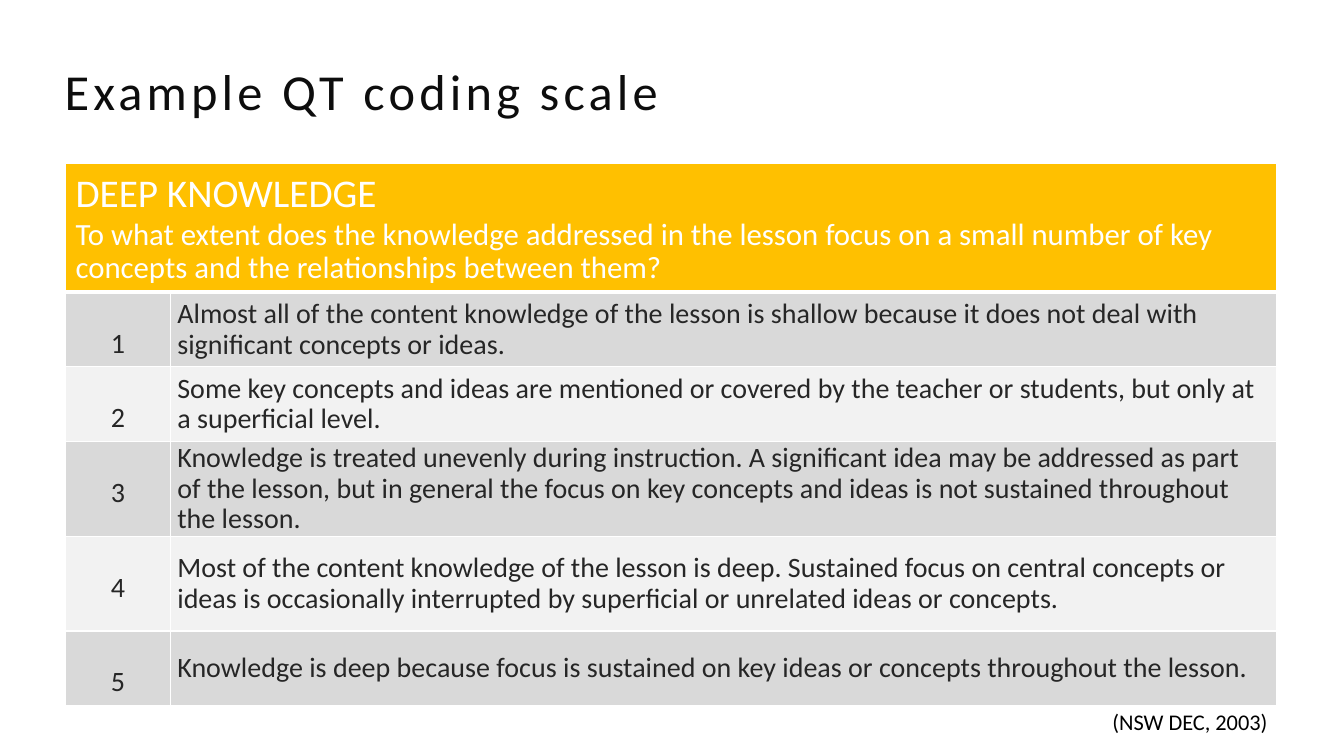
from dataclasses import dataclass

from lxml.etree import SubElement
from pptx import Presentation
from pptx.dml.color import RGBColor as Rgb
from pptx.enum.text import MSO_ANCHOR as Anchor, MSO_AUTO_SIZE as Fit, PP_ALIGN as Align
from pptx.oxml.ns import qn
from pptx.util import Inches, Pt


@dataclass(frozen=True)
class Theme:
    font: str = "Calibri"
    ink: str = "0D0D0D"
    text: str = "262626"
    black: str = "000000"
    white: str = "FFFFFF"
    gold: str = "FFC000"
    bands: tuple = ("D9D9D9", "F2F2F2")
    title: int = 36
    head: int = 28
    lead: int = 22
    body: int = 20
    note: int = 16


HEAD = "DEEP KNOWLEDGE"
LEAD = ("To what extent does the knowledge addressed in the lesson focus on a "
        "small number of key concepts and the relationships between them?")
# Each level of the scale: row height in grid rows, description
LEVELS = [
    (2.96, "Almost all of the content knowledge of the lesson is shallow because "
           "it does not deal with significant concepts or ideas."),
    (2.96, "Some key concepts and ideas are mentioned or covered by the teacher or "
           "students, but only at a superficial level."),
    (3.76, "Knowledge is treated unevenly during instruction. A significant idea may "
           "be addressed as part of the lesson, but in general the focus on key "
           "concepts and ideas is not sustained throughout the lesson."),
    (3.76, "Most of the content knowledge of the lesson is deep. Sustained focus on "
           "central concepts or ideas is occasionally interrupted by superficial or "
           "unrelated ideas or concepts."),
    (2.96, "Knowledge is deep because focus is sustained on key ideas or concepts "
           "throughout the lesson."),
]


class Deck:
    """One slide on a grid of 40 columns by 30 rows."""

    def __init__(self, theme):
        self.theme = theme
        self.file = Presentation()
        self.file.slide_width, self.file.slide_height = Inches(13.33), Inches(7.5)
        self.slide = self.file.slides.add_slide(self.file.slide_layouts[5])

    def col(self, n):
        return round(self.file.slide_width * n / 40)

    def row(self, n):
        return round(self.file.slide_height * n / 30)

    def box(self, left, top, wide, high):
        return self.col(left), self.row(top), self.col(wide), self.row(high)

    def style(self, para, size, color, align=Align.LEFT, line=0.9):
        para.alignment, para.line_spacing = align, line
        para.space_before = Pt(0)
        for run in para.runs:
            font = run.font
            font.name, font.size, font.bold = self.theme.font, Pt(size), False
            font.color.rgb = Rgb.from_string(color)

    def title(self, text, *area):
        shape = self.slide.shapes.title
        shape.left, shape.top, shape.width, shape.height = self.box(*area)
        frame = shape.text_frame
        frame.text = text
        frame.vertical_anchor, frame.auto_size = Anchor.MIDDLE, Fit.SHAPE_TO_FIT_TEXT
        para = frame.paragraphs[0]
        self.style(para, self.theme.title, self.theme.ink, line=0.85)
        para.runs[0].font._element.set("spc", "300")

    def note(self, text, *area):
        frame = self.slide.shapes.add_textbox(*self.box(*area)).text_frame
        frame.word_wrap = True
        frame.text = text
        self.style(frame.paragraphs[0], self.theme.note, self.theme.black, Align.RIGHT)

    def paint(self, cell, fill, base=1):
        """Give a cell white borders, the bottom one base points wide, and a fill."""
        props = cell._tc.get_or_add_tcPr()
        for side, width in zip("LRTB", (1, 1, 1, base)):
            edge = SubElement(props, qn(f"a:ln{side}"), w=str(Pt(width)))
            solid = SubElement(edge, qn("a:solidFill"))
            SubElement(solid, qn("a:srgbClr"), val=self.theme.white)
        cell.fill.solid()
        cell.fill.fore_color.rgb = Rgb.from_string(fill)

    def pad(self, cell, side, end):
        cell.margin_left = cell.margin_right = Inches(side)
        cell.margin_top = cell.margin_bottom = Inches(end)

    def scale(self, left, top, cols, first):
        """Draw the coding table: a merged heading row, then one row per level."""
        theme = self.theme
        rows = [first] + [high for high, _ in LEVELS]
        area = self.box(left, top, sum(cols), sum(rows))
        table = self.slide.shapes.add_table(len(rows), len(cols), *area).table
        table.first_row = table.horz_banding = False
        for column, wide in zip(table.columns, cols):
            column.width = self.col(wide)
        for row, high in zip(table.rows, rows):
            row.height = self.row(high)

        for cell in table.rows[0].cells:
            self.paint(cell, theme.gold, 3)
        head = table.cell(0, 0)
        head.merge(table.cell(0, 1))
        self.pad(head, 0.1, 0.05)
        head.vertical_anchor = Anchor.MIDDLE
        head.text_frame.text = f"{HEAD}\n{LEAD}"
        name, lead = head.text_frame.paragraphs
        self.style(name, theme.head, theme.white, line=1.0)
        self.style(lead, theme.lead, theme.white)

        for level, (_, text) in enumerate(LEVELS, 1):
            mark, info = table.rows[level].cells
            for cell, words in ((mark, str(level)), (info, text)):
                self.paint(cell, theme.bands[(level - 1) % 2])
                self.pad(cell, 0.07, 0)
                cell.text_frame.text = words
            info.vertical_anchor = Anchor.MIDDLE
            self.style(mark.text_frame.paragraphs[0], theme.body, theme.text,
                       Align.CENTER, 2.0)
            self.style(info.text_frame.paragraphs[0], theme.body, theme.text)


def main():
    deck = Deck(Theme())
    deck.title("Example QT coding scale", 1.62, 2.52, 35.68, 2.48)
    deck.scale(1.95, 6.48, (3.12, 32.92), 5.12)
    deck.note("(NSW DEC, 2003)", 31.87, 28.04, 6.15, 1.4)
    deck.file.save("out.pptx")


if __name__ == "__main__":
    main()
